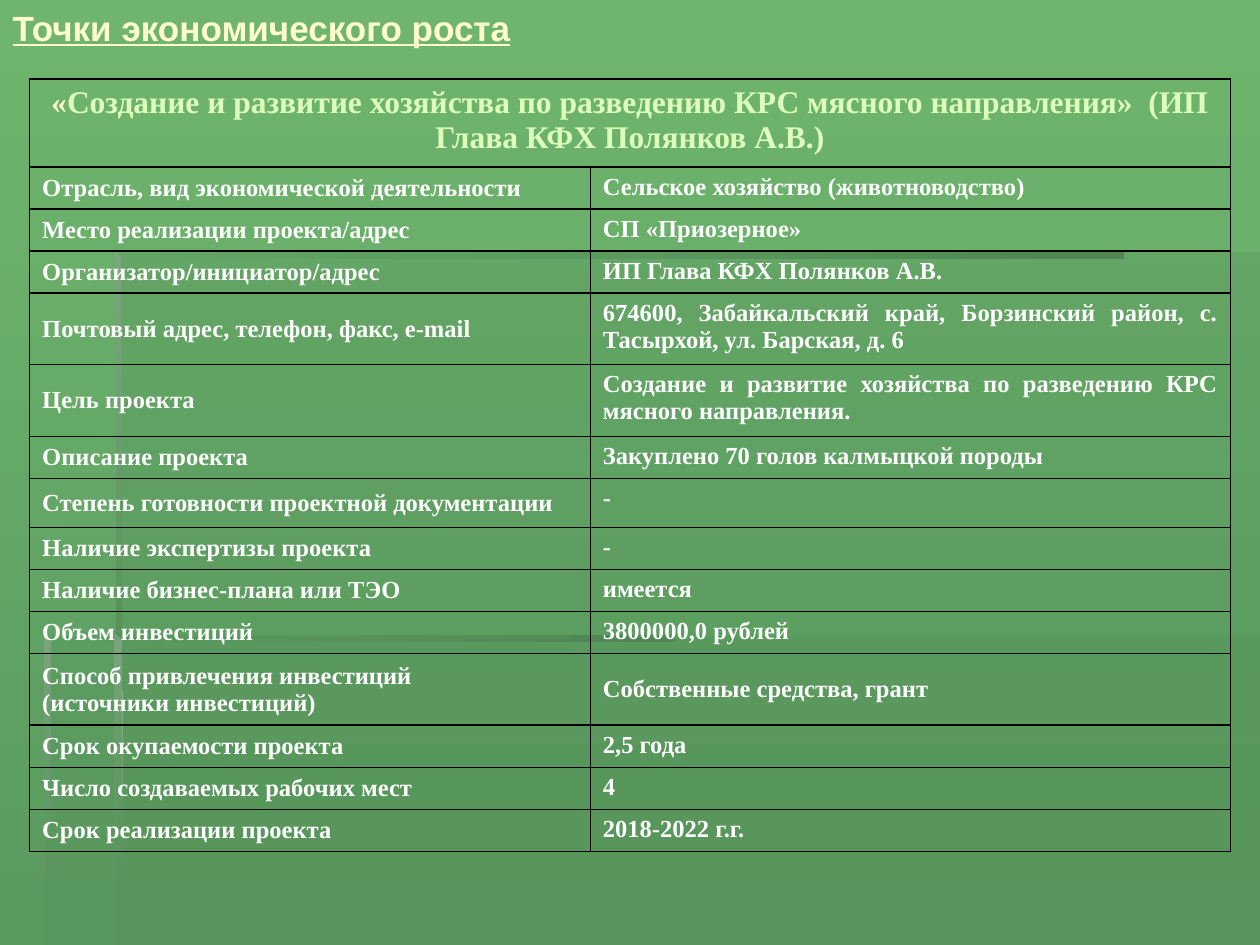
from lxml import etree
from pptx import Presentation
from pptx.dml.color import RGBColor
from pptx.enum.text import MSO_ANCHOR, MSO_AUTO_SIZE, PP_ALIGN
from pptx.oxml.ns import qn
from pptx.util import Inches, Pt

COLORS = {
    "sky": "6FB56D", "ground": "5A9A5F", "panel": "56925A", "edge": "4F8653",
    "light": "7DA57F", "cream": "FFFFCC", "lime": "DDFFBB", "white": "FFFFFF",
    "border": "000000",
}
LEFT, CENTER, JUSTIFY = PP_ALIGN.LEFT, PP_ALIGN.CENTER, PP_ALIGN.JUSTIFY
TOP, MIDDLE = MSO_ANCHOR.TOP, MSO_ANCHOR.MIDDLE
FARM = "ИП Глава КФХ Полянков А.В."

presentation = Presentation()
presentation.slide_width, presentation.slide_height = Inches(10), Inches(7.5)
COLUMN = presentation.slide_width // 100
ROW = presentation.slide_height // 75
slide = presentation.slides.add_slide(presentation.slide_layouts[5])


def paint(fill, stops, angle):
    """Fill with one colour name, or with two as a gradient (counter-clockwise angle)."""
    if len(stops) == 1:
        fill.solid()
        fill.fore_color.rgb = RGBColor.from_string(COLORS[stops[0]])
        return
    fill.gradient()
    fill.gradient_angle = angle
    for stop, name in zip(fill.gradient_stops, stops):
        stop.color.rgb = RGBColor.from_string(COLORS[name])


def style(run, size, color, font="Times New Roman"):
    run.font.name, run.font.size, run.font.bold = font, Pt(size), True
    run.font.color.rgb = RGBColor.from_string(COLORS[color])


paint(slide.background.fill, ["sky", "ground"], 270)

# Backdrop: outline in grid columns and rows, colours, opacities, gradient angle
backdrop = [
    ([(9.2, 50.5), (9.2, 75), (100, 75), (100, 50.5)], ["panel"], [30], 0),
    ([(9.4, 50.6), (3.6, 50.6), (3.6, 75), (100, 75), (100, 20), (9.4, 20)],
     ["panel"], [30], 0),
    ([(9.2, 20), (9.2, 20.5), (89.2, 20.5), (89.2, 20)], ["panel", "edge"], [0, 100], 0),
    ([(9.2, 20), (9.2, 51), (9.7, 51), (9.6, 20.4)], ["light", "panel"], [100, 100], 270),
    ([(9.1, 75), (9.7, 75), (9.6, 50.8), (9.1, 50.4)], ["light", "panel"], [100, 0], 270),
    ([(3.5, 50.4), (3.5, 50.9), (53.5, 50.9), (53.5, 50.4)], ["panel", "edge"], [0, 100], 0),
    ([(3.5, 50.4), (3.5, 75), (4, 75), (4, 50.9)], ["light", "panel"], [100, 10], 270),
]
for outline, stops, opacities, angle in backdrop:
    corners = [(round(x * COLUMN), round(y * ROW)) for x, y in outline]
    builder = slide.shapes.build_freeform(*corners[0])
    builder.add_line_segments(corners[1:], close=True)
    band = builder.convert_to_shape()
    band.shadow.inherit = False
    band.line.fill.background()
    paint(band.fill, stops, angle)
    for color, opacity in zip(band._element.spPr.iter(qn("a:srgbClr")), opacities):
        etree.SubElement(color, qn("a:alpha"), val=str(opacity * 1000))

heading = slide.shapes.title
heading.left, heading.top = 0, 0
heading.width, heading.height = round(41.8 * COLUMN), round(4.4 * ROW)
heading.text_frame.text = "Точки экономического роста"
heading.text_frame.word_wrap = False
heading.text_frame.auto_size = MSO_AUTO_SIZE.SHAPE_TO_FIT_TEXT
heading.text_frame.vertical_anchor = TOP
heading.text_frame.paragraphs[0].alignment = LEFT
heading_run = heading.text_frame.paragraphs[0].runs[0]
style(heading_run, 20, "cream", "Arial")
heading_run.font.underline = True

# Row heights in grid rows
SINGLE, DOUBLE, LOOSE, HEADER = 3.33, 5.68, 3.9, 7
project = [
    ("Отрасль, вид экономической деятельности", "Сельское хозяйство (животноводство)",
     SINGLE, LEFT, TOP),
    ("Место реализации проекта/адрес", "СП «Приозерное»", SINGLE, LEFT, TOP),
    ("Организатор/инициатор/адрес", FARM, SINGLE, LEFT, TOP),
    ("Почтовый адрес, телефон, факс, e-mail",
     "674600, Забайкальский край, Борзинский район, с. Тасырхой, ул. Барская, д. 6",
     DOUBLE, JUSTIFY, TOP),
    ("Цель проекта",
     "Создание и развитие хозяйства по разведению КРС мясного направления.",
     DOUBLE, JUSTIFY, TOP),
    ("Описание проекта", "Закуплено 70 голов калмыцкой породы", SINGLE, JUSTIFY, TOP),
    ("Степень готовности проектной документации", "-", LOOSE, LEFT, TOP),
    ("Наличие экспертизы проекта", "-", SINGLE, LEFT, TOP),
    ("Наличие бизнес-плана или ТЭО", "имеется", SINGLE, LEFT, TOP),
    ("Объем инвестиций", "3800000,0 рублей", SINGLE, LEFT, TOP),
    ("Способ привлечения инвестиций\n(источники инвестиций)",
     "Собственные средства, грант", DOUBLE, JUSTIFY, MIDDLE),
    ("Срок окупаемости проекта", "2,5 года", SINGLE, LEFT, TOP),
    ("Число создаваемых рабочих мест", "4", SINGLE, LEFT, TOP),
    ("Срок реализации проекта", "2018-2022 г.г.", SINGLE, LEFT, TOP),
]
heights = [HEADER] + [entry[2] for entry in project]
passport = slide.shapes.add_table(
    len(heights), 2, round(2.35 * COLUMN), round(6.25 * ROW),
    round(95.3 * COLUMN), round(sum(heights) * ROW)).table
passport.first_row = passport.horz_banding = False
for column, width in zip(passport.columns, (44.5, 50.8)):
    column.width = round(width * COLUMN)
for row, height in zip(passport.rows, heights):
    row.height = round(height * ROW)

for cell in passport.iter_cells():
    properties = cell._tc.get_or_add_tcPr()
    for side in ("a:lnL", "a:lnR", "a:lnT", "a:lnB"):
        border = etree.SubElement(properties, qn(side), w=str(Pt(1)))
        ink = etree.SubElement(border, qn("a:solidFill"))
        etree.SubElement(ink, qn("a:srgbClr"), val=COLORS["border"])
    cell.fill.background()

project_name = passport.cell(0, 0)
project_name.merge(passport.cell(0, 1))
name_line = project_name.text_frame.paragraphs[0]
name_line.alignment = CENTER
for text, color in (
    ("«", "cream"),
    ("Создание и развитие хозяйства по разведению КРС мясного направления»  "
     f"({FARM})", "lime"),
):
    run = name_line.add_run()
    run.text = text
    style(run, 18, color)

for index, (label, value, _, alignment, anchor) in enumerate(project, start=1):
    sides = ((label, LEFT, MIDDLE), (value, alignment, anchor))
    for column, (text, align, vertical) in enumerate(sides):
        cell = passport.cell(index, column)
        cell.text_frame.text = text
        cell.vertical_anchor = vertical
        for paragraph in cell.text_frame.paragraphs:
            paragraph.alignment = align
            style(paragraph.runs[0], 14, "white")

presentation.save("out.pptx")
